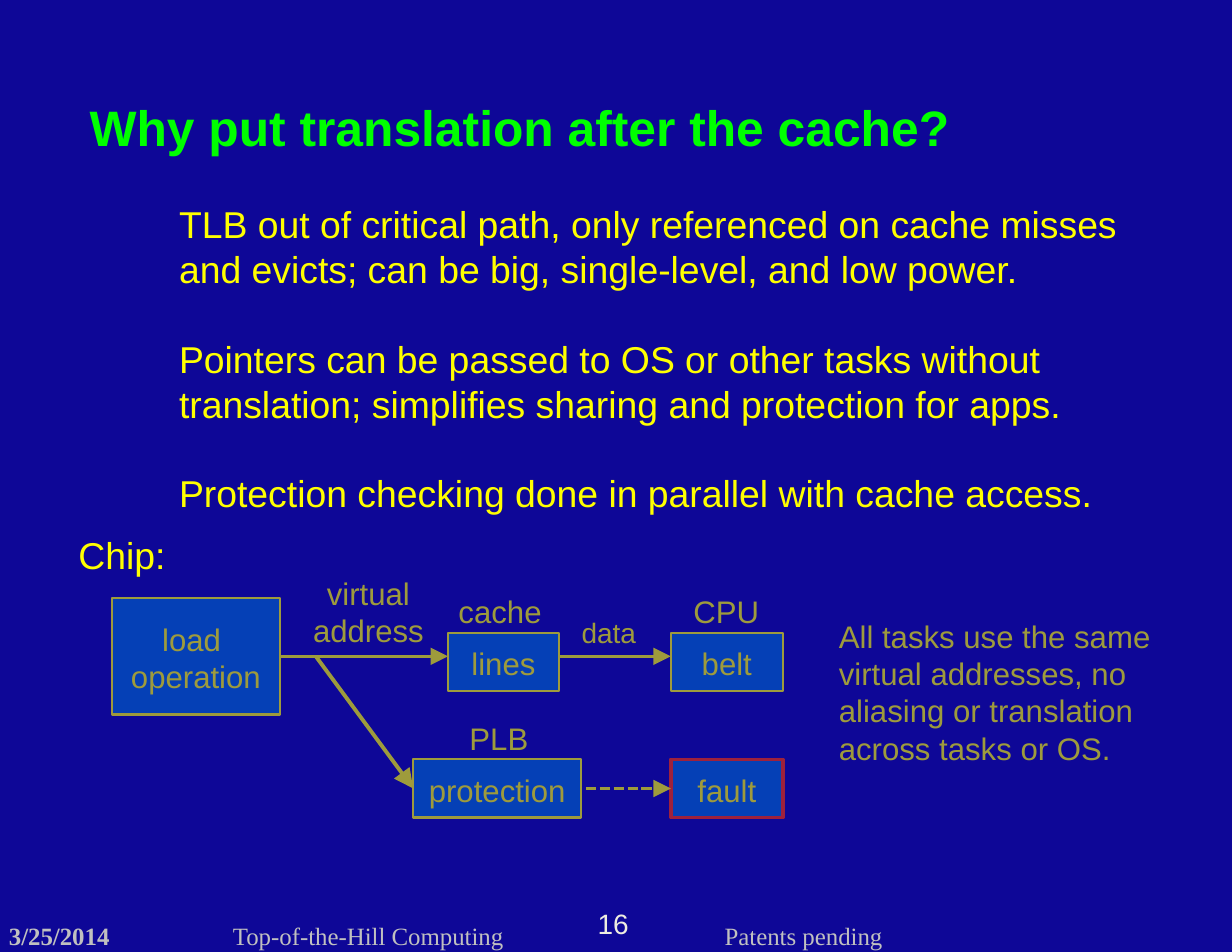
from lxml import etree
from pptx import Presentation
from pptx.dml.color import RGBColor
from pptx.enum.dml import MSO_LINE
from pptx.enum.shapes import MSO_CONNECTOR, MSO_SHAPE
from pptx.enum.text import MSO_ANCHOR, PP_ALIGN
from pptx.oxml.ns import qn
from pptx.util import Inches, Pt

NAVY = RGBColor(0x0E, 0x07, 0x97)
BLUE = RGBColor(0x00, 0x66, 0xCC)
YELLOW = RGBColor(0xFF, 0xFF, 0x00)
GREEN = RGBColor(0x00, 0xFF, 0x00)
RED = RGBColor(0xFF, 0x33, 0x00)
SILVER = RGBColor(0xC0, 0xC0, 0xC0)
CREAM = RGBColor(0xEE, 0xEC, 0xE1)
LEFT, CENTER = PP_ALIGN.LEFT, PP_ALIGN.CENTER
MIDDLE = MSO_ANCHOR.MIDDLE
BOX, RECT = MSO_SHAPE.ROUNDED_RECTANGLE, MSO_SHAPE.RECTANGLE
STRAIGHT, DASH = MSO_CONNECTOR.STRAIGHT, MSO_LINE.SQUARE_DOT
LEADING = 1.2
LEFT_SIDE, RIGHT_SIDE = 1, 3


def write(frame, lines, size=20, color=YELLOW, font="Arial", bold=False,
          align=LEFT, gap=0, wrap=False, inset=None):
    """Fill a text frame, one paragraph for each line."""
    frame.word_wrap = wrap
    if inset is not None:
        frame.margin_left = frame.margin_right = frame.margin_bottom = 0
        frame.margin_top = Inches(inset)
    for i, line in enumerate(lines):
        para = frame.paragraphs[0] if i == 0 else frame.add_paragraph()
        para.alignment = align
        para.line_spacing = Pt(size * LEADING)
        if i:
            para.space_before = Pt(gap)
        run = para.add_run()
        run.text = line
        run.font.size = Pt(size)
        run.font.name = font
        run.font.bold = bold
        run.font.color.rgb = color


def add_text(slide, at, *lines, **style):
    area = slide.shapes.add_textbox(*map(Inches, at))
    write(area.text_frame, lines, **style)


def add_box(slide, at, *lines, edge=YELLOW, width=1.45):
    box = slide.shapes.add_shape(BOX, *map(Inches, at))
    box.adjustments[0] = 0
    box.shadow.inherit = False
    box.fill.solid()
    box.fill.fore_color.rgb = BLUE
    box.line.color.rgb = edge
    box.line.width = Pt(width)
    box.text_frame.vertical_anchor = MIDDLE
    write(box.text_frame, lines, align=CENTER, inset=0.02)
    return box


def add_arrow(slide, start, end, width=2.25, dash=None, source=None, target=None):
    arrow = slide.shapes.add_connector(STRAIGHT, *map(Inches, start + end))
    if source:
        arrow.begin_connect(source, RIGHT_SIDE)
    if target:
        arrow.end_connect(target, LEFT_SIDE)
    arrow.line.color.rgb = YELLOW
    arrow.line.width = Pt(width)
    if dash:
        arrow.line.dash_style = dash
    etree.SubElement(arrow.line._get_or_add_ln(), qn("a:tailEnd"),
                     type="triangle", w="lg", len="lg")
    etree.SubElement(arrow._element.spPr, qn("a:effectLst"))


def add_veil(slide, at, opacity):
    """Dim what lies below with a see-through sheet."""
    veil = slide.shapes.add_shape(RECT, *map(Inches, at))
    veil.shadow.inherit = False
    veil.fill.solid()
    veil.fill.fore_color.rgb = NAVY
    veil.line.fill.background()
    tint = veil._element.spPr.find(qn("a:solidFill"))[0]
    etree.SubElement(tint, qn("a:alpha"), val=str(opacity * 1000))


def add_footer(slide):
    style = dict(size=16, color=SILVER, font="Times New Roman", inset=0)
    add_text(slide, (0.08, 8.22, 1, 0.26), "3/25/2014", bold=True, **style)
    add_text(slide, (2.08, 8.22, 2.46, 0.26), "Top-of-the-Hill Computing", **style)
    add_text(slide, (6.47, 8.22, 1.42, 0.26), "Patents pending", **style)
    add_text(slide, (5.32, 8.09, 0.31, 0.3), "16", size=18, color=CREAM,
             align=CENTER, inset=0)


def add_flow(slide):
    upper, lower, high = 5.65, 6.78, 0.52
    mid, low_mid = 5.86, lower + high / 2
    load = add_box(slide, (1, 5.34, 1.5, 1.04), "load ", "operation")
    guard = add_box(slide, (3.69, lower, 1.5, high), "protection")
    add_box(slide, (4, upper, 0.99, high), "lines")
    add_box(slide, (5.99, upper, 1, high), "belt")
    fault = add_box(slide, (5.99, lower, 1, high), "fault", edge=RED, width=2.25)

    add_arrow(slide, (4.99, mid), (5.99, mid))
    add_arrow(slide, (5.23, low_mid), (5.99, low_mid), dash=DASH, target=fault)
    add_arrow(slide, (2.5, mid), (4, mid), source=load)
    add_arrow(slide, (2.82, mid), (3.69, low_mid), width=2.5, target=guard)

    add_text(slide, (4.09, 6.37, 0.73, 0.45), "PLB", align=CENTER)
    add_text(slide, (6.09, 5.24, 0.79, 0.45), "CPU", align=CENTER)
    add_text(slide, (3.99, 5.24, 0.95, 0.45), "cache", align=CENTER)
    add_text(slide, (5.09, 5.45, 0.69, 0.42), "data", size=18, align=CENTER)
    add_text(slide, (2.69, 5.08, 1.2, 0.8), "virtual", "address", align=CENTER)


def main():
    deck = Presentation()
    deck.slide_width, deck.slide_height = Inches(11), Inches(8.5)
    slide = deck.slides.add_slide(deck.slide_layouts[6])
    slide.background.fill.solid()
    slide.background.fill.fore_color.rgb = NAVY

    add_footer(slide)
    add_text(slide, (0.8, 0.82, 9.23, 0.52), "Why put translation after the cache?",
             size=32, color=GREEN, bold=True, wrap=True, inset=0.04)
    add_text(slide, (0.7, 4.73, 0.95, 0.39), "Chip:", size=24, inset=0.02)
    add_text(slide, (7.49, 5.49, 3.24, 1.3),
             "All tasks use the same virtual addresses, no aliasing or "
             "translation across tasks or OS.", wrap=True, inset=0.02)
    add_flow(slide)
    add_text(slide, (1.5, 1.75, 8.65, 3.01),
             "TLB out of critical path, only referenced on cache misses and "
             "evicts; can be big, single-level, and low power.",
             "Pointers can be passed to OS or other tasks without translation; "
             "simplifies sharing and protection for apps.",
             "Protection checking done in parallel with cache access.",
             size=24, gap=24 * LEADING, wrap=True)
    add_veil(slide, (0.45, 5.17, 9.93, 2.18), 40)
    deck.save("out.pptx")


if __name__ == "__main__":
    main()
